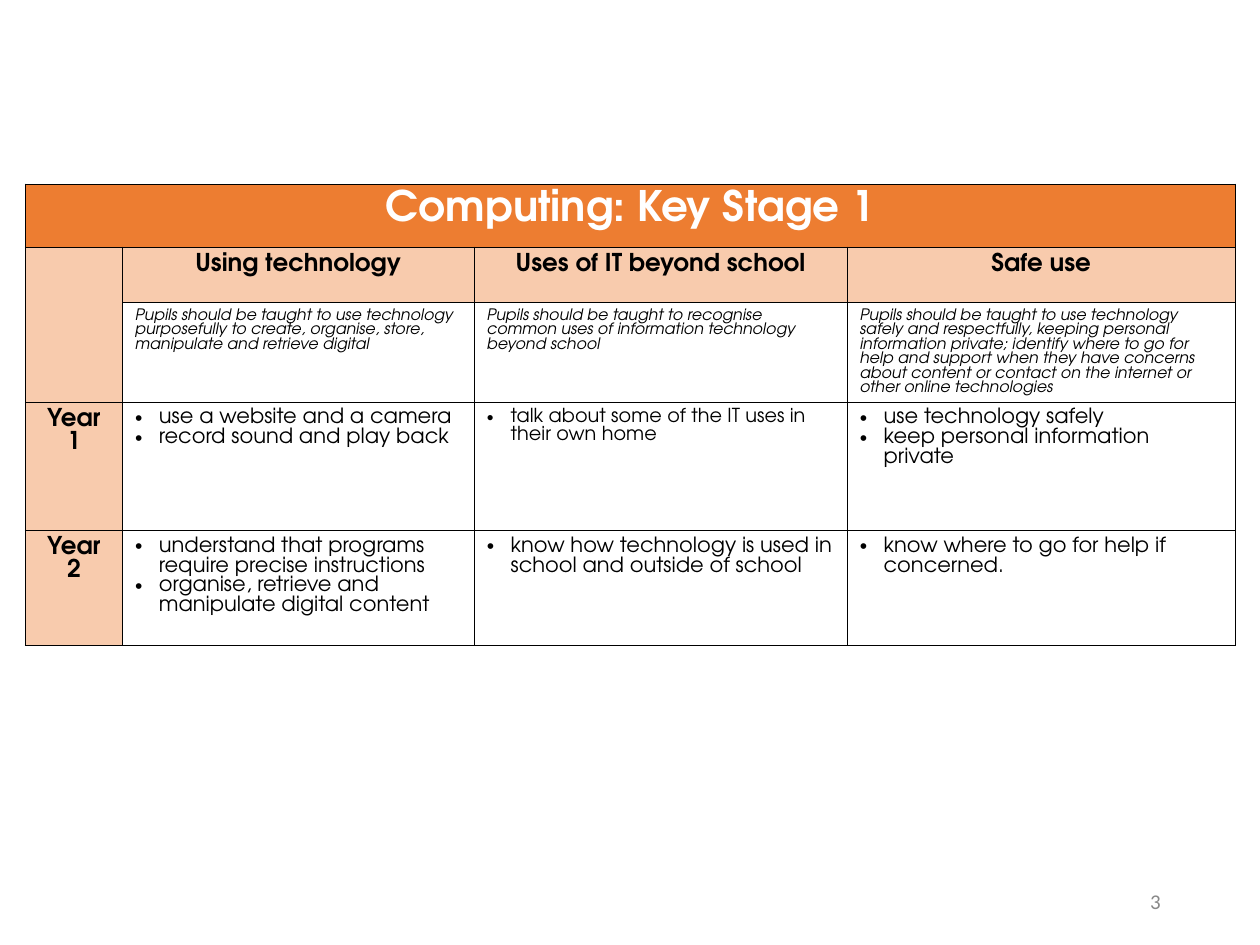
from lxml import etree
from pptx import Presentation, util as u
from pptx.dml.color import RGBColor
from pptx.enum import text
from pptx.oxml.ns import qn

FONT = "TeX Gyre Adventor"
ORANGE, PEACH, BLACK, WHITE, GREY = "ED7D31", "F8CBAD", "000000", "FFFFFF", "898989"
COLUMN_WIDTHS = [1.96, 7.09, 7.52, 7.82]
ROW_HEIGHTS = [1.27, 1.12, 1.99, 2.59, 2.31]
STRANDS = ["Using technology", "Uses of IT beyond school", "Safe use"]
AIMS = [
    "Pupils should be taught to use technology purposefully to create, organise, store, "
    "manipulate and retrieve digital",
    "Pupils should be taught to recognise common uses of information technology beyond school",
    "Pupils should be taught to use technology safely and respectfully, keeping personal "
    "information private; identify where to go for help and support when they have concerns "
    "about content or contact on the internet or other online technologies",
]
YEARS = {
    "Year 1": [
        (12, ["use a website and a camera", "record sound and play back"]),
        (11, ["talk about some of the IT uses in their own home"]),
        (12, ["use technology safely", "keep personal information private"]),
    ],
    "Year 2": [
        (12, ["understand that programs require precise instructions",
              "organise, retrieve and manipulate digital content"]),
        (12, ["know how technology is used in school and outside of school"]),
        (12, ["know where to go for help if concerned."]),
    ],
}


def color(value):
    """Turn a hex string into a colour."""
    return RGBColor.from_string(value)


def style_cell(cell, fill=None):
    """Give a cell thin black borders and an optional fill."""
    properties = cell._tc.get_or_add_tcPr()
    for side in ("lnL", "lnR", "lnT", "lnB"):
        line = etree.SubElement(properties, qn(f"a:{side}"), w=str(u.Pt(0.5)))
        solid = etree.SubElement(line, qn("a:solidFill"))
        etree.SubElement(solid, qn("a:srgbClr"), val=BLACK)
    if fill:
        cell.fill.solid()
        cell.fill.fore_color.rgb = color(fill)
    else:
        cell.fill.background()


def add_bullet(paragraph):
    """Put a hanging round bullet before a paragraph."""
    properties = paragraph._p.get_or_add_pPr()
    properties.set("marL", str(u.Cm(0.48)))
    properties.set("indent", str(-u.Cm(0.48)))
    etree.SubElement(properties, qn("a:buFont"), typeface="Arial")
    etree.SubElement(properties, qn("a:buChar"), char="•")


def write(frame, lines, size, ink=BLACK, font=FONT, bold=False, italic=False,
          align=text.PP_ALIGN.LEFT, bullets=False):
    """Write one paragraph for each line in a text frame."""
    for index, line in enumerate(lines):
        paragraph = frame.add_paragraph() if index else frame.paragraphs[0]
        paragraph.text = line
        paragraph.alignment = align
        if bullets:
            add_bullet(paragraph)
        paragraph.font.name = font
        paragraph.font.size = u.Pt(size)
        paragraph.font.bold = bold
        paragraph.font.italic = italic
        paragraph.font.color.rgb = color(ink)


def add_curriculum(slide, left, top):
    """Place the curriculum table with its top left corner at the given point."""
    frame = slide.shapes.add_table(
        len(ROW_HEIGHTS), len(COLUMN_WIDTHS), u.Cm(left), u.Cm(top),
        u.Cm(sum(COLUMN_WIDTHS)), u.Cm(sum(ROW_HEIGHTS)))
    table = frame.table
    table.first_row = table.horz_banding = False
    for column, width in zip(table.columns, COLUMN_WIDTHS):
        column.width = u.Cm(width)
    for row, height in zip(table.rows, ROW_HEIGHTS):
        row.height = u.Cm(height)
    for r in range(len(ROW_HEIGHTS)):
        for c in range(len(COLUMN_WIDTHS)):
            fill = ORANGE if r == 0 else PEACH if r == 1 or c == 0 else None
            style_cell(table.cell(r, c), fill)
    table.cell(0, 0).merge(table.cell(0, 3))
    table.cell(1, 0).merge(table.cell(2, 0))

    heading = {"bold": True, "align": text.PP_ALIGN.CENTER}
    write(table.cell(0, 0).text_frame, ["Computing: Key Stage 1"], 24, WHITE, **heading)
    for c, (strand, aim) in enumerate(zip(STRANDS, AIMS), 1):
        write(table.cell(1, c).text_frame, [strand], 14, **heading)
        write(table.cell(2, c).text_frame, [aim], 9, italic=True)
    for r, (year, goals) in enumerate(YEARS.items(), 3):
        write(table.cell(r, 0).text_frame, [year], 14, **heading)
        for c, (size, lines) in enumerate(goals, 1):
            write(table.cell(r, c).text_frame, lines, size, bullets=True)


def add_page_number(slide, left, top, width, height):
    """Place the page number at the right of the given box."""
    frame = slide.shapes.add_textbox(
        u.Cm(left), u.Cm(top), u.Cm(width), u.Cm(height)).text_frame
    frame.word_wrap = True
    frame.vertical_anchor = text.MSO_ANCHOR.MIDDLE
    write(frame, ["3"], 12, GREY, "Calibri", align=text.PP_ALIGN.RIGHT)


def main():
    """Build the slide and save it."""
    presentation = Presentation()
    presentation.slide_width, presentation.slide_height = u.Cm(25.4), u.Cm(19.05)
    slide = presentation.slides.add_slide(presentation.slide_layouts[6])
    add_curriculum(slide, 0.51, 3.71)
    add_page_number(slide, 17.93, 17.65, 5.72, 1.02)
    presentation.save("out.pptx")


if __name__ == "__main__":
    main()
